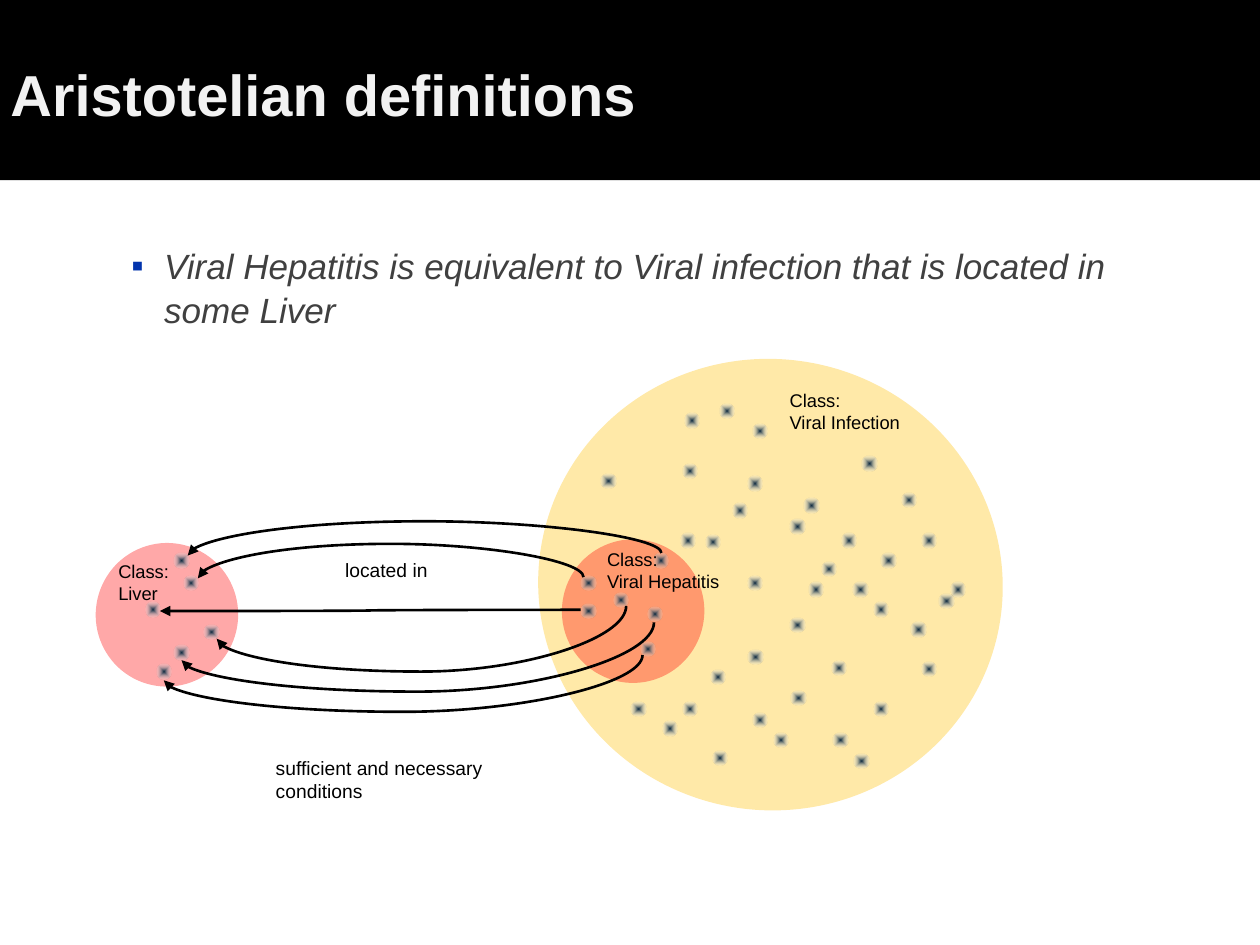
from lxml.etree import SubElement
from pptx import Presentation
from pptx.dml.color import RGBColor
from pptx.enum.shapes import MSO_CONNECTOR, MSO_SHAPE
from pptx.enum.text import MSO_ANCHOR, MSO_AUTO_SIZE, PP_ALIGN
from pptx.oxml import parse_xml
from pptx.oxml.ns import nsdecls, qn
from pptx.util import Pt

BLACK = RGBColor(0x00, 0x00, 0x00)
TITLE_COLOR = RGBColor(0xF2, 0xF2, 0xF2)
BODY_COLOR = RGBColor(0x40, 0x40, 0x40)
BULLET_COLOR = RGBColor(0x02, 0x34, 0xAD)
AMBER = RGBColor(0xFF, 0xC0, 0x00)
RED = RGBColor(0xFF, 0x00, 0x00)
DOT_CENTER = RGBColor(0x08, 0x25, 0x3C)
DOT_EDGE = RGBColor(0xFF, 0xFF, 0xFF)
FONT = "Arial"
DOT_SIZE = 8.64

TITLE = "Aristotelian definitions"
DEFINITION = "Viral Hepatitis is equivalent to Viral infection that is located in some Liver"

INFECTION_CLASS = (307.4, 205.2, 265.7, 257.8, AMBER)
HEPATITIS_CLASS = (321.1, 308.2, 81.4, 82.1, RED)
LIVER_CLASS = (54.7, 310.3, 81.4, 82.1, RED)

INFECTION_DOTS = [
    (332, 329), (370, 346.5), (360.5, 401), (406, 382.5), (378.5, 412),
    (430, 407), (442, 418.5), (390, 401), (427.5, 371), (407, 429),
    (452, 394.5), (366, 366.5), (476, 418.5), (488, 430.5), (403, 305.5),
    (390, 265), (427, 329), (451.5, 353), (481, 304.5), (475, 377.5),
    (515, 281.5), (499, 401), (391, 236), (430, 242), (418.5, 287.5),
    (427, 272), (459.5, 284.5), (451.5, 296.5), (492.5, 260.5), (543, 332.5),
    (487.5, 332.5), (499, 344), (526.5, 378), (469.5, 321), (520.5, 355.5),
    (503.5, 316), (536.5, 339), (526.5, 304.5), (332, 345), (350.5, 338.5),
    (462, 332.5), (373.5, 316), (411, 230.5), (343.5, 270.5), (389, 304.5),
]
LIVER_DOTS = [(99.5, 316), (116.5, 357), (99.5, 368.5),
              (89.5, 379.5), (83, 344), (105, 329)]

BENT_ARROWS = [
    (107.3, 317.5, 378, 316, 297.9),
    (93.6, 388.8, 367.2, 374.4, 406.8),
    (103.7, 377.3, 373.7, 355.7, 395.3),
    (123.8, 365, 357.8, 346.3, 383.8),
    (113, 330.5, 333.4, 329.8, 311),
]
LEVEL_ARROW = (91.4, 349.2, 331.9, 348.5)

LABELS = [
    ("Class:\nViral Infection", 444.2, 218.9, 79.2, 32.4, 10.5),
    ("Class:\nViral Hepatitis", 339.8, 309.6, 79.9, 32.4, 10.5),
    ("Class:\nLiver", 60.5, 316.8, 43.9, 32.4, 10.5),
    ("located in", 190.1, 315.4, 61.9, 20.9, 11),
    ("sufficient and necessary\nconditions", 150.5, 428.4, 133.9, 33.8, 11),
]


def style_text(frame, size, color, bold=False, italic=False):
    for para in frame.paragraphs:
        para.alignment = PP_ALIGN.LEFT
        for span in para.runs:
            span.font.name = FONT
            span.font.size = Pt(size)
            span.font.color.rgb = color
            span.font.bold = bold
            span.font.italic = italic


def set_insets(frame):
    frame.margin_left = frame.margin_right = Pt(6)
    frame.margin_top = frame.margin_bottom = Pt(3)


def add_plain_shape(slide, kind, left, top, width, height):
    shape = slide.shapes.add_shape(kind, Pt(left), Pt(top), Pt(width), Pt(height))
    shape.shadow.inherit = False
    shape.line.fill.background()
    return shape


def add_title(slide):
    band = add_plain_shape(slide, MSO_SHAPE.RECTANGLE, 0, 0, 720, 103)
    band.fill.solid()
    band.fill.fore_color.rgb = BLACK
    frame = band.text_frame
    frame.text = TITLE
    frame.vertical_anchor = MSO_ANCHOR.MIDDLE
    set_insets(frame)
    frame.paragraphs[0].line_spacing = 1.1
    style_text(frame, 33, TITLE_COLOR, bold=True)


def add_definition(slide):
    box = slide.shapes.add_textbox(Pt(39.6), Pt(135.4), Pt(645.8), Pt(33))
    frame = box.text_frame
    frame.word_wrap = True
    frame.text = DEFINITION
    set_insets(frame)
    style_text(frame, 20, BODY_COLOR, italic=True)
    para = frame.paragraphs[0]
    para.space_before = Pt(4)
    para.line_spacing = 1.05
    properties = para._p.get_or_add_pPr()
    properties.set("marL", str(Pt(48.24)))
    properties.set("indent", str(Pt(-18.72)))
    bullet_color = SubElement(properties, qn("a:buClr"))
    SubElement(bullet_color, qn("a:srgbClr"), val=str(BULLET_COLOR))
    SubElement(properties, qn("a:buFont"), typeface=FONT)
    SubElement(properties, qn("a:buChar"), char="▪")


def add_class(slide, left, top, width, height, color):
    circle = add_plain_shape(slide, MSO_SHAPE.OVAL, left, top, width, height)
    circle.rotation = 9.7
    circle.fill.solid()
    circle.fill.fore_color.rgb = color
    tint = circle._element.spPr.find(qn("a:solidFill"))[0]
    SubElement(tint, qn("a:alpha"), val="34000")


def add_dots(slide, places):
    for left, top in places:
        dot = add_plain_shape(slide, MSO_SHAPE.OVAL, left, top, DOT_SIZE, DOT_SIZE)
        dot.rotation = 5.2
        gradient = parse_xml(
            f'<a:gradFill {nsdecls("a")} rotWithShape="1"><a:gsLst>'
            f'<a:gs pos="0"><a:srgbClr val="{DOT_CENTER}"/></a:gs>'
            f'<a:gs pos="100000"><a:srgbClr val="{DOT_EDGE}"><a:alpha val="0"/></a:srgbClr></a:gs>'
            '</a:gsLst><a:path path="shape">'
            '<a:fillToRect l="50000" t="50000" r="50000" b="50000"/></a:path></a:gradFill>')
        dot._element.spPr.find(qn("a:prstGeom")).addnext(gradient)


def add_arrow(slide, start_x, start_y, end_x, end_y):
    arrow = slide.shapes.add_connector(
        MSO_CONNECTOR.CURVE, Pt(start_x), Pt(start_y), Pt(end_x), Pt(end_y))
    arrow.line.color.rgb = BLACK
    arrow.line.width = Pt(1.5)
    SubElement(arrow.line._get_or_add_ln(), qn("a:headEnd"), type="triangle")
    SubElement(arrow._element.spPr, qn("a:effectLst"))
    return arrow


def add_bent_arrow(slide, start_x, start_y, end_x, end_y, bend_y):
    arrow = add_arrow(slide, start_x, start_y, end_x, end_y)
    width, height = start_y - end_y, end_x - start_x
    arrow.left = Pt((start_x + end_x - width) / 2)
    arrow.top = Pt((start_y + end_y - height) / 2)
    arrow.width, arrow.height = Pt(width), Pt(height)
    properties = arrow._element.spPr
    frame = properties.find(qn("a:xfrm"))
    for name, value in (("rot", "5400000"), ("flipH", "1"), ("flipV", "1")):
        frame.set(name, value)
    bend = round((start_y - bend_y) / width * 100000)
    guides = properties.find(qn("a:prstGeom")).find(qn("a:avLst"))
    SubElement(guides, qn("a:gd"), name="adj1", fmla=f"val {bend}")


def add_label(slide, text, left, top, width, height, size):
    box = slide.shapes.add_textbox(Pt(left), Pt(top), Pt(width), Pt(height))
    frame = box.text_frame
    frame.word_wrap = False
    frame.auto_size = MSO_AUTO_SIZE.SHAPE_TO_FIT_TEXT
    frame.text = text
    style_text(frame, size, BLACK)


def main():
    deck = Presentation()
    deck.slide_width, deck.slide_height = Pt(720), Pt(540)
    page = deck.slides.add_slide(deck.slide_layouts[6])
    add_title(page)
    add_definition(page)
    add_class(page, *INFECTION_CLASS)
    add_class(page, *HEPATITIS_CLASS)
    add_dots(page, INFECTION_DOTS)
    add_class(page, *LIVER_CLASS)
    add_dots(page, LIVER_DOTS)
    for arrow in BENT_ARROWS:
        add_bent_arrow(page, *arrow)
    add_arrow(page, *LEVEL_ARROW)
    for label in LABELS:
        add_label(page, *label)
    deck.save("out.pptx")


if __name__ == "__main__":
    main()
